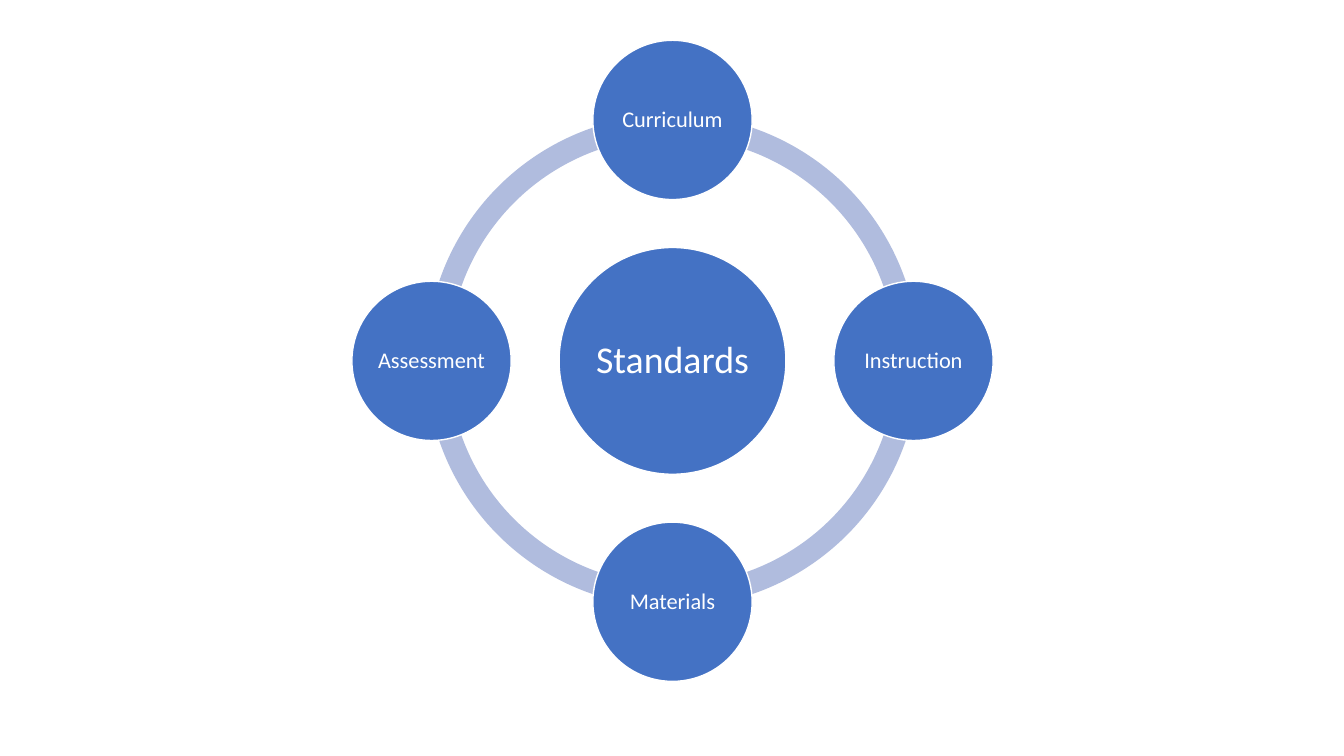
import math

import pptx
import pptx.dml.color
import pptx.enum.shapes
import pptx.enum.text
import pptx.util

Inches = pptx.util.Inches
Pt = pptx.util.Pt

BLUE = pptx.dml.color.RGBColor(0x44, 0x72, 0xC4)
PALE_BLUE = pptx.dml.color.RGBColor(0xB0, 0xBC, 0xDE)
WHITE = pptx.dml.color.RGBColor(0xFF, 0xFF, 0xFF)

CENTER_X, CENTER_Y = 6.67, 3.58
ORBIT_RADIUS = 2.39
RING_DIAMETER = 4.89
RING_THICKNESS = 0.046  # share of the ring diameter
HUB_DIAMETER = 2.25
TOPIC_DIAMETER = 1.58
TOPICS = ["Curriculum", "Instruction", "Materials", "Assessment"]  # clockwise from the top


def add_round_shape(slide, kind, center_x, center_y, diameter, color):
    """Add a filled, unshadowed shape in a square box around a center."""
    shape = slide.shapes.add_shape(
        kind,
        Inches(center_x - diameter / 2),
        Inches(center_y - diameter / 2),
        Inches(diameter),
        Inches(diameter),
    )
    shape.shadow.inherit = False
    shape.fill.solid()
    shape.fill.fore_color.rgb = color
    shape.line.fill.background()
    return shape


def write_text(shape, text, size, color=WHITE, font="Calibri", inset=0.02):
    """Write one centered line of text in the middle of a shape."""
    frame = shape.text_frame
    frame.word_wrap = False
    frame.vertical_anchor = pptx.enum.text.MSO_ANCHOR.MIDDLE
    frame.margin_left = frame.margin_right = Inches(inset)
    frame.margin_top = frame.margin_bottom = Inches(inset)
    paragraph = frame.paragraphs[0]
    paragraph.alignment = pptx.enum.text.PP_ALIGN.CENTER
    paragraph.line_spacing = 0.9
    run = paragraph.add_run()
    run.text = text
    run.font.size = Pt(size)
    run.font.name = font
    run.font.color.rgb = color


def add_ring_quarter(slide, start_degrees):
    """Add a quarter of the ring, clockwise from the start angle."""
    arc = add_round_shape(slide, pptx.enum.shapes.MSO_SHAPE.BLOCK_ARC,
                          CENTER_X, CENTER_Y, RING_DIAMETER, PALE_BLUE)
    # Adjustment angles count 0.6 for each degree
    arc.adjustments[0] = start_degrees * 0.6
    arc.adjustments[1] = (start_degrees + 90) % 360 * 0.6
    arc.adjustments[2] = RING_THICKNESS


def add_circle(slide, text, center_x, center_y, diameter, **text_format):
    """Add a white-edged circle with its label."""
    circle = add_round_shape(slide, pptx.enum.shapes.MSO_SHAPE.OVAL,
                             center_x, center_y, diameter, BLUE)
    circle.line.color.rgb = WHITE
    circle.line.width = Pt(1)
    write_text(circle, text, **text_format)


def main():
    presentation = pptx.Presentation()
    presentation.slide_width = Inches(13.33)
    presentation.slide_height = Inches(7.5)
    slide = presentation.slides.add_slide(presentation.slide_layouts[6])

    # Ring behind the circles
    for start_degrees in (180, 90, 0, 270):
        add_ring_quarter(slide, start_degrees)

    # Hub
    add_circle(slide, "Standards", CENTER_X, CENTER_Y, HUB_DIAMETER, size=27, inset=0.04)

    # Topics evenly spaced around the hub
    for index, topic in enumerate(TOPICS):
        angle = 2 * math.pi * index / len(TOPICS)
        add_circle(slide, topic,
                   CENTER_X + ORBIT_RADIUS * math.sin(angle),
                   CENTER_Y - ORBIT_RADIUS * math.cos(angle),
                   TOPIC_DIAMETER, size=16)

    presentation.save("out.pptx")


if __name__ == "__main__":
    main()
